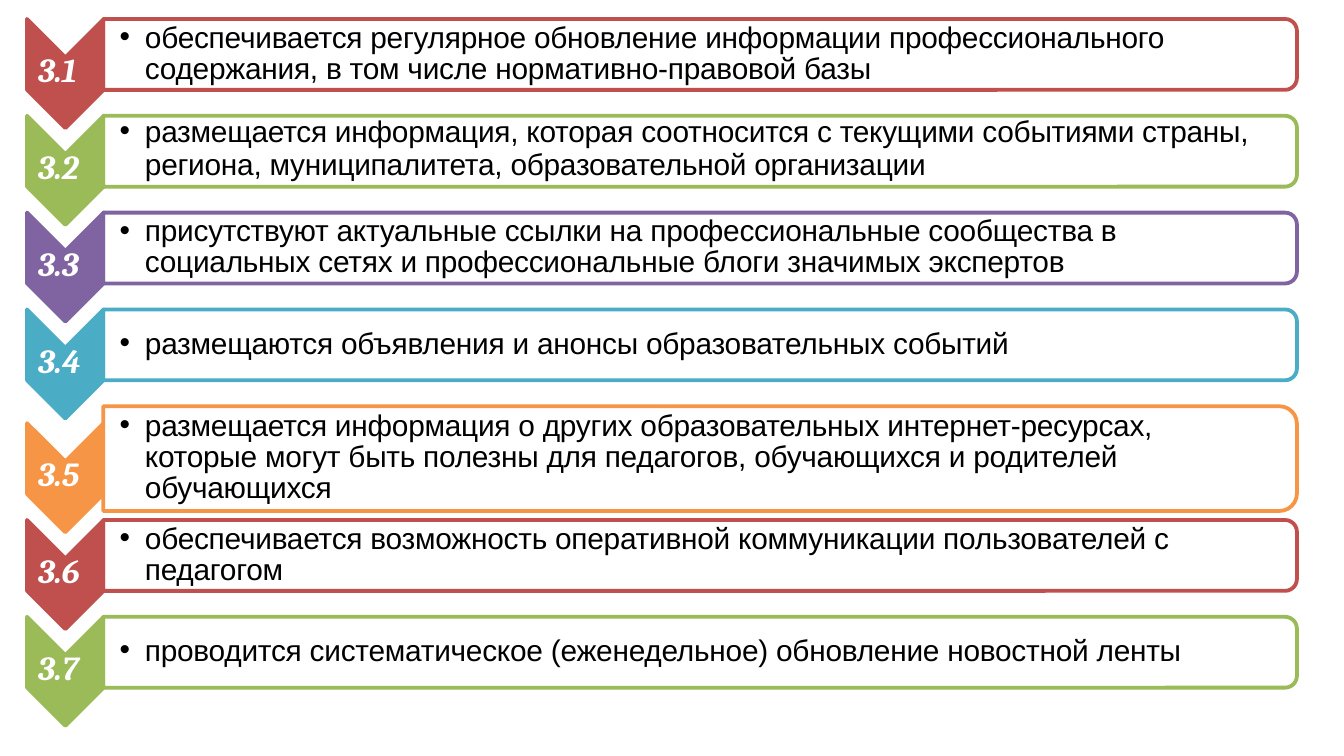
from dataclasses import dataclass

from lxml.etree import SubElement
from pptx import Presentation
from pptx.dml.color import RGBColor as RGB
from pptx.enum.shapes import MSO_SHAPE as Shape
from pptx.oxml.ns import qn
from pptx.util import Cm, Pt


@dataclass(frozen=True)
class Theme:
    red: str = "C0504D"
    green: str = "9BBA58"
    purple: str = "8063A1"
    teal: str = "4AACC5"
    orange: str = "F79546"
    white: str = "FFFFFF"
    black: str = "000000"
    label_font: str = "Cambria"
    body_font: str = "Arial"
    label_size: float = 18
    body_size: float = 16
    line_width: float = 2.04


@dataclass(frozen=True)
class Row:
    color: str
    paragraphs: tuple
    height: float = 1.34
    text_dy: float = -0.05
    text_width: float = 22.38
    text_height: float = 1.32
    inset: float = 0.13
    leading: float = 16.6


T = Theme()
SINGLE = dict(text_dy=0.25, text_height=0.74, inset=0.03, leading=None)
ROWS = [
    Row(T.red, ("обеспечивается регулярное обновление информации профессионального "
                "содержания, в том числе нормативно-правовой базы",)),
    Row(T.green, ("размещается информация, которая соотносится с текущими событиями страны,",
                  "региона, муниципалитета, образовательной организации"),
        inset=0.03, leading=17.9),
    Row(T.purple, ("присутствуют актуальные ссылки на профессиональные сообщества в\n"
                   "социальных сетях и профессиональные блоги значимых экспертов",)),
    Row(T.teal, ("размещаются объявления и анонсы образовательных событий",), **SINGLE),
    Row(T.orange, ("размещается информация о других образовательных интернет-ресурсах, "
                   "которые могут быть полезны для педагогов, обучающихся и родителей "
                   "обучающихся",),
        height=1.98, text_dy=-0.03, text_width=20.17, text_height=1.9),
    Row(T.red, ("обеспечивается возможность оперативной коммуникации пользователей с "
                "педагогом",)),
    Row(T.green, ("проводится систематическое (еженедельное) обновление новостной ленты",),
        **SINGLE),
]
TOP, PITCH, BAND = 0.36, 1.83, 1.34


class Deck:
    """Draws styled elements on the current slide."""

    def __init__(self, theme):
        self.t = theme
        self.prs = Presentation()
        self.prs.slide_width, self.prs.slide_height = Cm(25.4), Cm(14.29)
        self.s = self.prs.slides.add_slide(self.prs.slide_layouts[6])

    def turned(self, kind, x, y, w, h, fill, line):
        """Add a preset shape turned a quarter so that it covers the given box."""
        sp = self.s.shapes.add_shape(
            kind, Cm(x + (w - h) / 2), Cm(y + (h - w) / 2), Cm(h), Cm(w))
        sp.rotation = 90
        sp.shadow.inherit = False
        sp.fill.solid()
        sp.fill.fore_color.rgb = RGB.from_string(fill)
        sp.line.color.rgb = RGB.from_string(line)
        sp.line.width = Pt(self.t.line_width)
        return sp

    def chevron(self, y, color):
        """Add a chevron that points down."""
        self.turned(Shape.CHEVRON, 0.51, y, 1.45, 2.06, color, color)

    def panel(self, y, height, color):
        """Add a slightly transparent panel with rounded right corners."""
        sp = self.turned(Shape.ROUND_2_SAME_RECTANGLE, 1.95, y, 22.56, height,
                         self.t.white, color)
        clr = sp._element.spPr.find(qn("a:solidFill"))[0]
        SubElement(clr, qn("a:alpha"), val="90000")

    def frame(self, x, y, w, h, inset):
        """Add an empty text box and return its text frame."""
        tf = self.s.shapes.add_textbox(Cm(x), Cm(y), Cm(w), Cm(h)).text_frame
        tf.margin_left = tf.margin_right = tf.margin_bottom = 0
        tf.margin_top = Cm(inset)
        return tf

    def label(self, y, text):
        """Add a number on a chevron."""
        tf = self.frame(0.72, y + 0.54, 1.07, 0.84, 0.03)
        r = tf.paragraphs[0].add_run()
        r.text = text
        f = r.font
        f.name, f.size = self.t.label_font, Pt(self.t.label_size)
        f.bold = f.italic = True
        f.color.rgb = RGB.from_string(self.t.white)

    def bullet(self, p, hanging):
        """Indent a paragraph and mark it if it hangs."""
        pPr = p._p.get_or_add_pPr()
        pPr.set("marL", str(Cm(0.76)))
        pPr.set("indent", str(Cm(-0.48) if hanging else 0))
        if hanging:
            SubElement(pPr, qn("a:buFont"), typeface=self.t.body_font)
            SubElement(pPr, qn("a:buChar"), char="•")
        else:
            SubElement(pPr, qn("a:buNone"))

    def body(self, y, row):
        """Add the bulleted text of a row."""
        tf = self.frame(1.98, y + row.text_dy, row.text_width, row.text_height, row.inset)
        tf.word_wrap = True
        for i, text in enumerate(row.paragraphs):
            p = tf.add_paragraph() if i else tf.paragraphs[0]
            self.bullet(p, hanging=i == 0)
            if row.leading:
                p.line_spacing = Pt(row.leading)
            for j, line in enumerate(text.split("\n")):
                if j:
                    p.add_line_break()
                r = p.add_run()
                r.text = line
                r.font.name, r.font.size = self.t.body_font, Pt(self.t.body_size)
                r.font.color.rgb = RGB.from_string(self.t.black)
                r._r.get_or_add_rPr().set("spc", "-10")


def main():
    deck = Deck(T)
    y = TOP
    for n, row in enumerate(ROWS, 1):
        shift = (row.height - BAND) / 2
        deck.chevron(y + shift, row.color)
        deck.label(y + shift, f"3.{n}")
        deck.panel(y, row.height, row.color)
        deck.body(y, row)
        y += PITCH + shift
    deck.prs.save("out.pptx")


if __name__ == "__main__":
    main()
